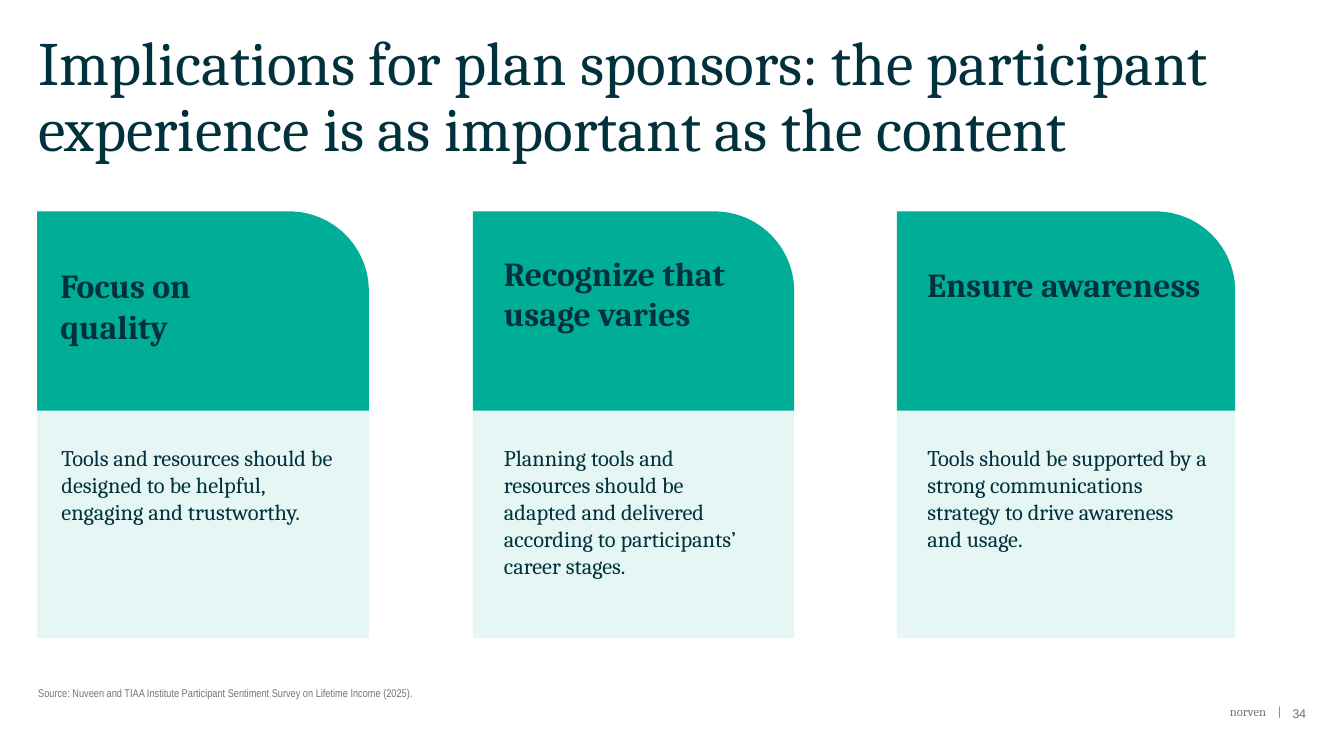
"""Build the slide on what the survey implies for plan sponsors."""
from dataclasses import dataclass

from lxml.etree import SubElement
from pptx import Presentation
from pptx.dml.color import RGBColor
from pptx.enum.shapes import MSO_SHAPE as Preset
from pptx.enum.text import MSO_ANCHOR as Anchor, MSO_AUTO_SIZE as AutoSize, PP_ALIGN as Align
from pptx.oxml.ns import qn
from pptx.shapes.autoshape import Shape
from pptx.slide import Slide
from pptx.util import Pt

NAVY, TEAL, GRAY = "00313C", "00AD97", "747476"
SERIF, SANS, NARROW = "Cambria", "Arial", "Arial Narrow"
HEAD_TOP, HEAD_HEIGHT, BODY_TOP, BODY_HEIGHT = 151, 142.4, 293.2, 162.5
BODY_TEXT_TOP = 317.5


@dataclass
class Box:
    left: float
    top: float
    width: float
    height: float

    def lengths(self) -> tuple[Pt, Pt, Pt, Pt]:
        return Pt(self.left), Pt(self.top), Pt(self.width), Pt(self.height)


@dataclass
class Style:
    size: float
    font: str = SERIF
    color: str = NAVY
    bold: bool = False
    align: Align = Align.LEFT
    anchor: Anchor = Anchor.TOP
    line_spacing: float = 1.0
    space_after: float = 0
    right_tab: float = 0
    grow: bool = False


@dataclass
class Card:
    left: float
    width: float
    heading: str
    heading_box: Box
    body: str
    body_left: float
    body_width: float


TITLE = Style(44, line_spacing=0.9)
HEADING = Style(24, bold=True, space_after=5.3, grow=True)
BODY = Style(16, grow=True)
SOURCE = Style(8, NARROW, GRAY, anchor=Anchor.BOTTOM)
FOOTER = Style(9, color=GRAY, right_tab=37)
NUMBER = Style(9, SANS, GRAY, align=Align.RIGHT)

CARDS = [
    Card(26.6, 238.4 - 1.5, "Focus on quality", Box(43.2, 189.5, 168.5, 58.3),
         "Tools and resources should be designed to be helpful, engaging and trustworthy.",
         43.9, 195.1),
    Card(337.8, 229.5, "Recognize that usage varies", Box(360, 180.7, 178, 87),
         "Planning tools and resources should be adapted and delivered "
         "according to participants’ career stages.",
         360, 183.6),
    Card(640.6, 241.7, "Ensure awareness", Box(662.4, 188.8, 208, 58.3),
         "Tools should be supported by a strong communications strategy "
         "to drive awareness and usage.",
         662.4, 202.3),
]


def rgb(color: str) -> RGBColor:
    """Turn a hex string into a colour."""
    return RGBColor.from_string(color)


def add_text(slide: Slide, text: str, box: Box, style: Style) -> None:
    """Add a text box without margins."""
    frame = slide.shapes.add_textbox(*box.lengths()).text_frame
    frame.margin_left = frame.margin_top = frame.margin_right = frame.margin_bottom = 0
    frame.word_wrap = True
    frame.auto_size = AutoSize.SHAPE_TO_FIT_TEXT if style.grow else AutoSize.NONE
    frame.vertical_anchor = style.anchor
    paragraph = frame.paragraphs[0]
    paragraph.text = text
    paragraph.alignment = style.align
    paragraph.line_spacing = style.line_spacing
    paragraph.space_after = Pt(style.space_after)
    if style.right_tab:
        tabs = SubElement(paragraph._p.get_or_add_pPr(), qn("a:tabLst"))
        SubElement(tabs, qn("a:tab"), pos=str(Pt(style.right_tab)), algn="r")
    font = paragraph.font
    font.size, font.name, font.bold = Pt(style.size), style.font, style.bold
    font.color.rgb = rgb(style.color)


def add_panel(slide: Slide, preset: Preset, box: Box) -> Shape:
    """Add a teal shape without outline or shadow."""
    shape = slide.shapes.add_shape(preset, *box.lengths())
    shape.shadow.inherit = False
    shape.fill.solid()
    shape.fill.fore_color.rgb = rgb(TEAL)
    shape.line.fill.background()
    return shape


def set_opacity(shape: Shape, percent: int) -> None:
    """Make a solid fill partly transparent."""
    color = shape._element.spPr.find(qn("a:solidFill"))[0]
    SubElement(color, qn("a:alpha"), val=str(percent * 1000))


def add_card(slide: Slide, card: Card) -> None:
    """Add a card with a rounded head and a tinted body."""
    head = add_panel(slide, Preset.ROUND_1_RECTANGLE,
                     Box(card.left, HEAD_TOP, card.width, HEAD_HEIGHT))
    head.adjustments[0] = 0.4
    body = add_panel(slide, Preset.RECTANGLE,
                     Box(card.left, BODY_TOP, card.width, BODY_HEIGHT))
    set_opacity(body, 10)
    add_text(slide, card.heading, card.heading_box, HEADING)
    add_text(slide, card.body, Box(card.body_left, BODY_TEXT_TOP, card.body_width, 97), BODY)


def main() -> None:
    """Build and save the slide."""
    presentation = Presentation()
    presentation.slide_width, presentation.slide_height = Pt(960), Pt(540)
    slide = presentation.slides.add_slide(presentation.slide_layouts[6])
    add_text(slide, "Implications for plan sponsors: the participant experience "
             "is as important as the content", Box(27.3, 23, 907, 96.5), TITLE)
    for card in CARDS:
        add_card(slide, card)
    add_text(slide, "Source: Nuveen and TIAA Institute Participant Sentiment Survey "
             "on Lifetime Income (2025).", Box(27.3, 471, 907, 28.8), SOURCE)
    add_text(slide, "norven\t|", Box(878.5, 502.6, 40, 14.4), FOOTER)
    add_text(slide, "34", Box(908.6, 504, 24.5, 28.8), NUMBER)
    presentation.save("out.pptx")


if __name__ == "__main__":
    main()
